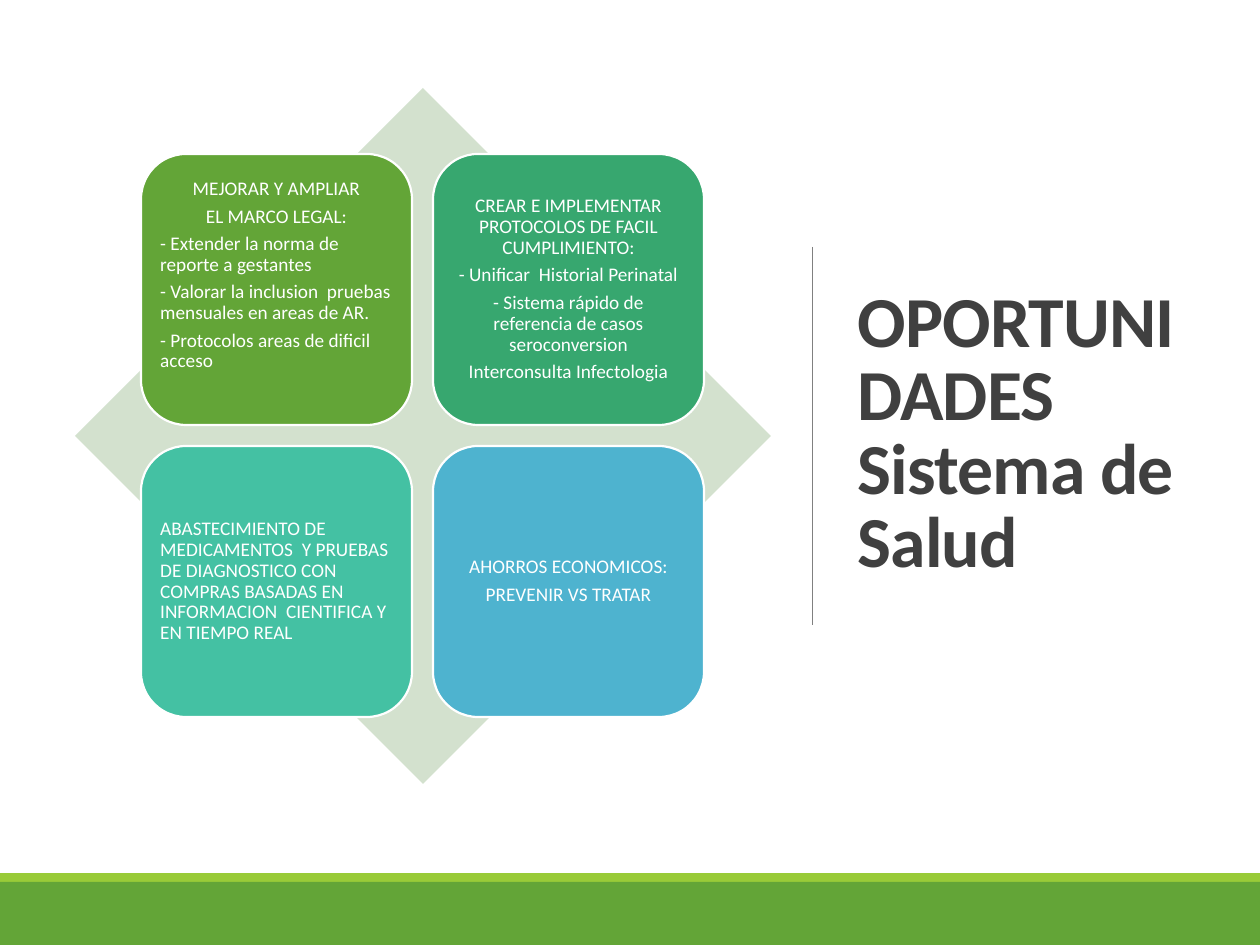
"""Build a slide of four health-system opportunities around a diamond."""
import pptx
import pptx.dml.color
import pptx.enum.shapes
import pptx.enum.text
import pptx.util
from lxml import etree

RGBColor = pptx.dml.color.RGBColor
SHAPE = pptx.enum.shapes.MSO_SHAPE
ALIGN = pptx.enum.text.PP_ALIGN
MIDDLE = pptx.enum.text.MSO_ANCHOR.MIDDLE

WHITE = RGBColor(0xFF, 0xFF, 0xFF)
DARK_GRAY = RGBColor(0x40, 0x40, 0x40)
MID_GRAY = RGBColor(0x80, 0x80, 0x80)
LIME = RGBColor(0x99, 0xCB, 0x38)
GREEN = RGBColor(0x63, 0xA5, 0x37)
EMERALD = RGBColor(0x37, 0xA7, 0x6F)
TEAL = RGBColor(0x44, 0xC1, 0xA3)
BLUE = RGBColor(0x4E, 0xB3, 0xCF)
PALE_GREEN = RGBColor(0xD3, 0xE1, 0xCE)

TITLE = "OPORTUNIDADES Sistema de Salud"
TITLE_BOX = (845, 87, 349, 697)
DIVIDER = (812, 247, 812, 625)
BACKDROP = [
    (SHAPE.RECTANGLE, (0, 873, 1260, 9), LIME),
    (SHAPE.RECTANGLE, (0, 882, 1260, 63), GREEN),
    (SHAPE.DIAMOND, (75, 88, 696, 696), PALE_GREEN),
]

TILE_LEFT, TILE_TOP, TILE_SIZE, TILE_PITCH = 141, 154, 271, 292
TILE_INSET = 6
TILES = [
    {"fill": GREEN, "bottom": 34, "lines": [
        (ALIGN.CENTER, "MEJORAR Y AMPLIAR"),
        (ALIGN.CENTER, "EL MARCO LEGAL:"),
        (ALIGN.LEFT, "- Extender la norma de reporte a gestantes"),
        (ALIGN.LEFT, "- Valorar la inclusion  pruebas mensuales en areas de AR."),
        (ALIGN.LEFT, "- Protocolos areas de dificil acceso"),
    ]},
    {"fill": EMERALD, "bottom": TILE_INSET, "lines": [
        (ALIGN.CENTER, "CREAR E IMPLEMENTAR PROTOCOLOS DE FACIL CUMPLIMIENTO:"),
        (ALIGN.CENTER, "- Unificar  Historial Perinatal"),
        (ALIGN.CENTER, "- Sistema rápido de referencia de casos seroconversion"),
        (ALIGN.CENTER, "Interconsulta Infectologia"),
    ]},
    {"fill": TEAL, "bottom": TILE_INSET, "lines": [
        (ALIGN.LEFT, "ABASTECIMIENTO DE MEDICAMENTOS  Y PRUEBAS DE DIAGNOSTICO CON "
                     "COMPRAS BASADAS EN INFORMACION  CIENTIFICA Y EN TIEMPO REAL"),
    ]},
    {"fill": BLUE, "bottom": TILE_INSET, "lines": [
        (ALIGN.CENTER, "AHORROS ECONOMICOS:"),
        (ALIGN.CENTER, "PREVENIR VS TRATAR"),
    ]},
]

TITLE_FONT = {"name": "Calibri", "size": pptx.util.Pt(41), "bold": True}
TILE_FONT = {"name": "Calibri", "size": pptx.util.Pt(11)}
TILE_PARAGRAPH = {"line_spacing": 0.9, "space_before": pptx.util.Pt(0),
                  "space_after": pptx.util.Pt(3.85)}


def px(value):
    return pptx.util.Emu(round(value * 914400 / 126))


def set_attributes(target, values):
    for name, value in values.items():
        setattr(target, name, value)


def write_paragraph(paragraph, text, color, font, layout):
    run = paragraph.add_run()
    run.text = text
    run.font.color.rgb = color
    set_attributes(run.font, font)
    set_attributes(paragraph, layout)


def add_filled_shape(slide, kind, box, fill):
    shape = slide.shapes.add_shape(kind, *map(px, box))
    shape.shadow.inherit = False
    shape.fill.solid()
    shape.fill.fore_color.rgb = fill
    shape.line.fill.background()
    return shape


def add_title(slide):
    title = slide.shapes.title
    set_attributes(title, dict(zip(("left", "top", "width", "height"), map(px, TITLE_BOX))))
    set_attributes(title.text_frame, {
        "word_wrap": True, "vertical_anchor": MIDDLE,
        "auto_size": pptx.enum.text.MSO_AUTO_SIZE.NONE})
    write_paragraph(title.text_frame.paragraphs[0], TITLE, DARK_GRAY, TITLE_FONT,
                    {"alignment": ALIGN.LEFT, "line_spacing": 0.85})
    for properties in title.element.xpath(".//a:rPr"):
        properties.set("spc", "-50")


def add_divider(slide):
    divider = slide.shapes.add_connector(
        pptx.enum.shapes.MSO_CONNECTOR.STRAIGHT, *map(px, DIVIDER))
    divider.line.color.rgb = MID_GRAY
    divider.line.width = pptx.util.Pt(0.5)
    etree.SubElement(divider.element.spPr, pptx.oxml.ns.qn("a:effectLst"))


def add_tile(slide, index, tile):
    row, column = divmod(index, 2)
    box = (TILE_LEFT + column * TILE_PITCH, TILE_TOP + row * TILE_PITCH,
           TILE_SIZE, TILE_SIZE)
    shape = add_filled_shape(slide, SHAPE.ROUNDED_RECTANGLE, box, tile["fill"])
    shape.line.color.rgb = WHITE
    shape.line.width = pptx.util.Pt(1.25)
    frame = shape.text_frame
    set_attributes(frame, {
        "word_wrap": True, "vertical_anchor": MIDDLE,
        "margin_left": px(TILE_INSET), "margin_right": px(TILE_INSET),
        "margin_top": px(TILE_INSET), "margin_bottom": px(tile["bottom"])})
    for number, (alignment, text) in enumerate(tile["lines"]):
        paragraph = frame.add_paragraph() if number else frame.paragraphs[0]
        write_paragraph(paragraph, text, WHITE, TILE_FONT,
                        {**TILE_PARAGRAPH, "alignment": alignment})


def main():
    presentation = pptx.Presentation()
    presentation.slide_width, presentation.slide_height = px(1260), px(945)
    slide = presentation.slides.add_slide(presentation.slide_layouts[5])
    add_title(slide)
    add_divider(slide)
    for kind, box, fill in BACKDROP:
        add_filled_shape(slide, kind, box, fill)
    for index, tile in enumerate(TILES):
        add_tile(slide, index, tile)
    presentation.save("out.pptx")


if __name__ == "__main__":
    main()
